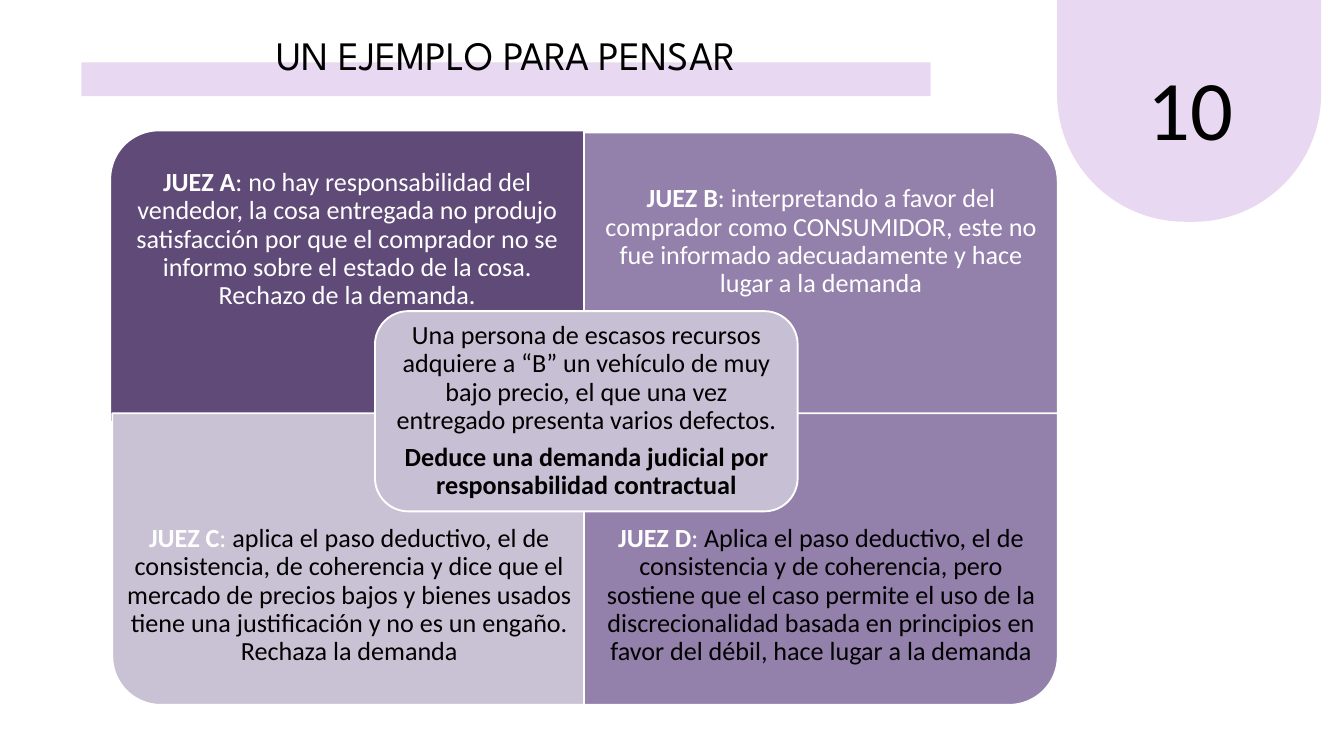
from pptx import Presentation
from pptx import util as u
from pptx.dml import color
from pptx.enum import shapes, text

I = u.Inches
SHAPE = shapes.MSO_SHAPE
LILAC, WHITE, BLACK = "E9D8F1", "FFFFFF", "000000"


def rgb(value):
    return color.RGBColor.from_string(value)


def add_block(s, kind, box, fill, line=None, rotation=0):
    x, y, w, h = box
    if rotation % 180:
        x, y, w, h = x + (w - h) / 2, y + (h - w) / 2, h, w
    sp = s.shapes.add_shape(kind, I(x), I(y), I(w), I(h))
    sp.rotation = rotation
    sp.shadow.inherit = False
    sp.fill.solid()
    sp.fill.fore_color.rgb = rgb(fill)
    if line:
        sp.line.color.rgb = rgb(line)
        sp.line.width = u.Pt(2)
    else:
        sp.line.fill.background()
    return sp


def set_frame(tf, margin, anchor):
    tf.word_wrap = True
    tf.auto_size = text.MSO_AUTO_SIZE.NONE
    tf.vertical_anchor = anchor
    tf.margin_left = tf.margin_right = tf.margin_top = tf.margin_bottom = I(margin)


def style(r, size, hue, font="Calibri", bold=False):
    r.font.name = font
    r.font.size = u.Pt(size)
    r.font.bold = bold
    r.font.color.rgb = rgb(hue)


def add_text(s, box, margin, paragraphs, size=28, spacing=0.9, after=9.8,
             anchor=text.MSO_ANCHOR.MIDDLE):
    tf = s.shapes.add_textbox(*map(I, box)).text_frame
    set_frame(tf, margin, anchor)
    for i, runs in enumerate(paragraphs):
        p = tf.add_paragraph() if i else tf.paragraphs[0]
        p.alignment = text.PP_ALIGN.CENTER
        p.line_spacing = spacing
        p.space_after = u.Pt(after)
        for words, hue, bold in runs:
            r = p.add_run()
            r.text = words
            style(r, size, hue, bold=bold)


def add_heading(s, box):
    x, y, w, h = box
    add_block(s, SHAPE.RECTANGLE, (x, y + 0.53, w, 0.5), LILAC)
    sp = s.shapes.title
    sp.left, sp.top, sp.width, sp.height = I(x + 0.24), I(y), I(w - 0.48), I(h)
    s.shapes._spTree.append(sp._element)
    tf = sp.text_frame
    tf.text = "UN EJEMPLO PARA PENSAR"
    set_frame(tf, 0, text.MSO_ANCHOR.TOP)
    p = tf.paragraphs[0]
    p.alignment = text.PP_ALIGN.CENTER
    p.line_spacing = u.Pt(55.7)
    p.space_before = u.Pt(0)
    style(p.runs[0], 43.2, BLACK, "League Spartan")


def add_number_tab(s, box):
    x, y, w, h = box
    tab = add_block(s, SHAPE.ROUND_2_SAME_RECTANGLE, box, LILAC, rotation=180)
    tab.adjustments[0] = 0.5
    add_text(s, (x + 1.07, y + 1.09, 1.84, 1.7), 0, [[("10", BLACK, False)]],
             90.7, u.Pt(127), 0, text.MSO_ANCHOR.TOP)


def add_judge(s, box, fill, rotation, name, verdict, hue, text_top):
    x, y, w, h = box
    add_block(s, SHAPE.ROUND_1_RECTANGLE, box, fill, WHITE, rotation)
    runs = [(f"JUEZ {name}", WHITE, True), (": ", WHITE, False), (verdict, hue, False)]
    add_text(s, (x, y + text_top, w, 0.75 * h), 0.22, [runs])


def add_matrix(s, box):
    x, y, w, h = box
    cw, ch = w / 2, 4.34
    low = y + h - ch
    judges = [
        (x, y, "5F4A78", 270, "A", WHITE, 0,
         "no hay responsabilidad del vendedor, la cosa entregada no produjo satisfacción "
         "por que el comprador no se informo sobre el estado de la cosa. "
         "Rechazo de la demanda."),
        (x + cw, y + 0.03, "9380AB", 0, "B", WHITE, 0,
         "interpretando a favor del comprador como CONSUMIDOR, este no fue informado "
         "adecuadamente y hace lugar a la demanda"),
        (x + 0.03, low, "C9C2D4", 180, "C", BLACK, ch / 4,
         "aplica el paso deductivo, el de consistencia, de coherencia y dice que el "
         "mercado de precios bajos y bienes usados tiene una justificación y no es un "
         "engaño. Rechaza la demanda"),
        (x + cw, low, "9380AB", 90, "D", BLACK, ch / 4,
         "Aplica el paso deductivo, el de consistencia y de coherencia, pero sostiene que "
         "el caso permite el uso de la discrecionalidad basada en principios en favor del "
         "débil, hace lugar a la demanda"),
    ]
    for left, top, fill, rotation, name, hue, text_top, verdict in judges:
        add_judge(s, (left, top, cw, ch), fill, rotation, name, verdict, hue, text_top)


def add_case(s, box):
    x, y, w, h = box
    add_block(s, SHAPE.ROUNDED_RECTANGLE, box, "C7BFD3", WHITE)
    add_text(s, (x + 0.15, y + 0.15, w - 0.3, h - 0.3), 0.12, [
        [("Una persona de escasos recursos adquiere a “B” un vehículo de muy bajo precio, "
          "el que una vez entregado presenta varios defectos.", BLACK, False)],
        [("Deduce una demanda judicial por responsabilidad contractual", BLACK, True)],
    ])


def main():
    prs = Presentation()
    prs.slide_width, prs.slide_height = I(20), I(11.25)
    s = prs.slides.add_slide(prs.slide_layouts[5])
    add_heading(s, (1.21, 0.4, 12.64, 0.79))
    add_number_tab(s, (15.73, -0.51, 3.93, 3.81))
    add_matrix(s, (1.64, 1.94, 14.1, 8.55))
    add_case(s, (5.58, 4.63, 6.29, 2.98))
    prs.save("out.pptx")


if __name__ == "__main__":
    main()
